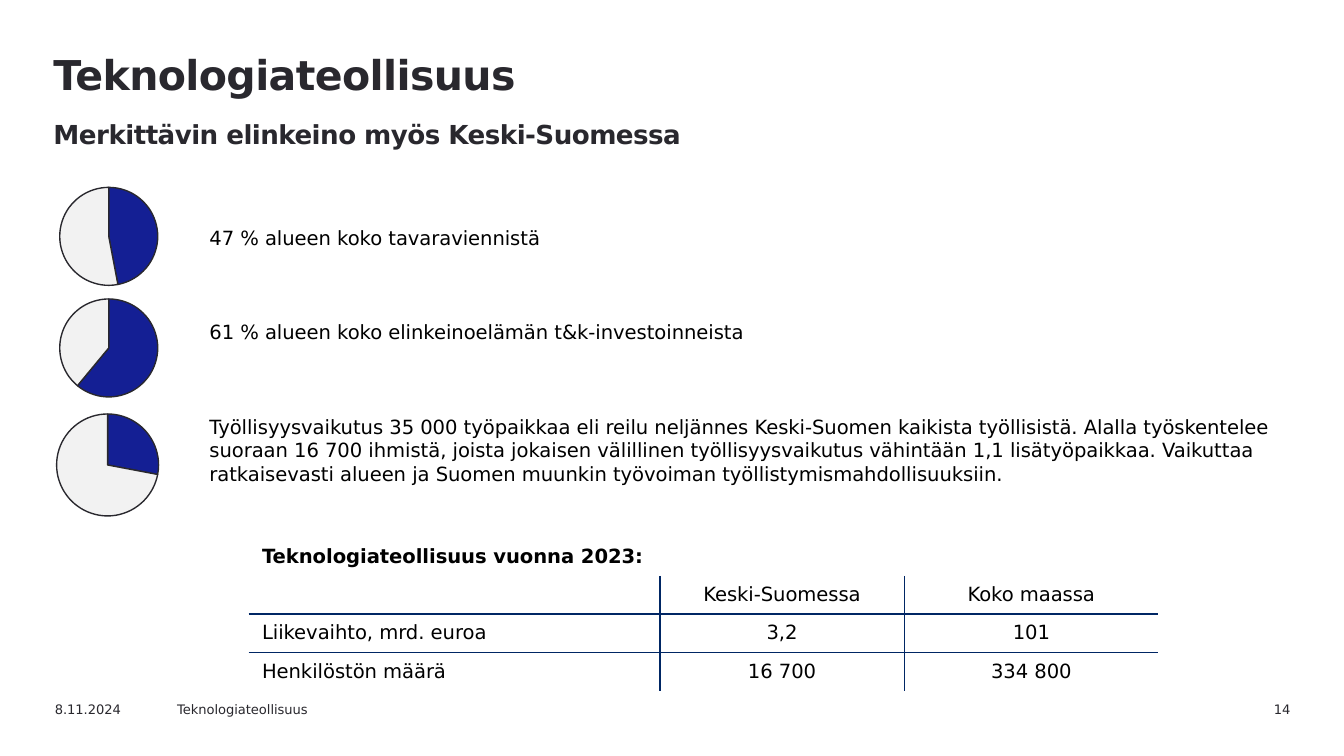
from dataclasses import dataclass

from lxml.etree import SubElement, fromstring
from pptx import Presentation
from pptx.chart.data import CategoryChartData as ChartData
from pptx.dml.color import RGBColor as RGB
from pptx.enum.chart import XL_CHART_TYPE as Kind
from pptx.enum.text import MSO_ANCHOR as Anchor, PP_ALIGN as Align
from pptx.oxml.ns import nsdecls, qn
from pptx.util import Pt


@dataclass(frozen=True)
class Theme:
    font: str = "DejaVu Sans"
    dark: str = "29282E"
    black: str = "000000"
    blue: str = "141F94"
    pale: str = "F2F2F2"
    rule: str = "002664"
    title: float = 22
    sub: float = 14
    body: float = 10.5
    foot: float = 7


THEME = Theme()

POINTS = [
    "47 % alueen koko tavaraviennistä",
    "61 % alueen koko elinkeinoelämän t&k-investoinneista",
    "Työllisyysvaikutus 35 000 työpaikkaa eli reilu neljännes Keski-Suomen "
    "kaikista työllisistä. Alalla työskentelee suoraan 16 700 ihmistä, joista "
    "jokaisen välillinen työllisyysvaikutus vähintään 1,1 lisätyöpaikkaa. "
    "Vaikuttaa ratkaisevasti alueen ja Suomen muunkin työvoiman "
    "työllistymismahdollisuuksiin.",
]
PIES = [(47, 22.3, 90.7, 72), (61, 22.3, 150.5, 72), (28, 20.2, 211.7, 74.9)]
ROWS = [
    ["Teknologiateollisuus vuonna 2023:", "", ""],
    ["", "Keski-Suomessa", "Koko maassa"],
    ["Liikevaihto, mrd. euroa", "3,2", "101"],
    ["Henkilöstön määrä", "16 700", "334 800"],
]
COLS = [220.3, 131, 136.1]


def write(par, text, size=THEME.body, color=THEME.black, bold=False,
          align=Align.LEFT, track=0):
    """Add a run to a paragraph; track is letter spacing in points."""
    par.alignment = align
    run = par.add_run()
    run.text = text
    font = run.font
    font.name, font.size, font.bold = THEME.font, Pt(size), bold
    font.color.rgb = RGB.from_string(color)
    if track:
        run._r.get_or_add_rPr().set("spc", str(round(track * 100)))


def add_box(slide, x, y, w, h):
    box = slide.shapes.add_textbox(Pt(x), Pt(y), Pt(w), Pt(h))
    box.text_frame.word_wrap = True
    return box.text_frame


def add_head(slide):
    par = add_box(slide, 20.2, 22.5, 629.3, 51).paragraphs[0]
    par.line_spacing = Pt(27)
    par._p.get_or_add_pPr().set("marL", str(Pt(1.4)))
    look = dict(color=THEME.dark, bold=True, track=-0.3)
    write(par, "Teknologiateollisuus", size=THEME.title, **look)
    par.add_line_break()
    write(par, "Merkittävin elinkeino myös Keski-Suomessa",
          size=THEME.sub, **look)


def add_points(slide):
    frame = add_box(slide, 105.1, 117.4, 589.7, 174.2)
    for i, text in enumerate(POINTS):
        par = frame.add_paragraph() if i else frame.paragraphs[0]
        if i:
            par.space_before = Pt(38)
        write(par, text)


def add_foot(slide, text, x, w, align=Align.LEFT):
    par = add_box(slide, x, 372.2, w, 13).paragraphs[0]
    write(par, text, size=THEME.foot, color=THEME.dark, align=align)


def add_pie(slide, share, x, y, side):
    data = ChartData()
    data.categories = ["1", "2"]
    data.add_series("Series 1", (share, 100 - share))
    chart = slide.shapes.add_chart(
        Kind.PIE, Pt(x), Pt(y), Pt(side), Pt(side), data).chart
    chart.has_legend = chart.has_title = False
    chart.font.name, chart.font.size = THEME.font, Pt(18)
    chart.font.color.rgb = RGB.from_string(THEME.dark)
    plot = chart.plots[0]
    plot.vary_by_categories = True
    for i, color in enumerate((THEME.blue, THEME.pale)):
        look = plot.series[0].points[i].format
        look.fill.solid()
        look.fill.fore_color.rgb = RGB.from_string(color)
        look.line.color.rgb = RGB.from_string(THEME.dark)
        look.line.width = Pt(0.75)
    set_plot(chart, 0.135, 0.73)


def set_plot(chart, start, size):
    """Fix the plot area as fractions of the chart's side."""
    area = chart._chartSpace.chart.plotArea
    for old in area.findall(qn("c:layout")):
        area.remove(old)
    layout = fromstring(f"<c:layout {nsdecls('c')}/>")
    area.insert(0, layout)
    manual = SubElement(layout, qn("c:manualLayout"))
    for tag, val in (("layoutTarget", "inner"), ("xMode", "edge"),
                     ("yMode", "edge"), ("x", start), ("y", start),
                     ("w", size), ("h", size)):
        SubElement(manual, qn("c:" + tag)).set("val", str(val))


def set_edges(cell, edges):
    """Draw the edges that are true, in the order left, right, top, bottom."""
    props = cell._tc.get_or_add_tcPr()
    for i, (side, on) in enumerate(zip("LRTB", edges)):
        paint = (f'<a:solidFill><a:srgbClr val="{THEME.rule}"/></a:solidFill>'
                 if on else "<a:noFill/>")
        props.insert(i, fromstring(
            f'<a:ln{side} {nsdecls("a")} w="{Pt(1)}">{paint}</a:ln{side}>'))


def add_grid(slide):
    table = slide.shapes.add_table(
        len(ROWS), len(COLS), Pt(133.2), Pt(288), Pt(sum(COLS)), Pt(82)).table
    table.first_row = table.horz_banding = False
    for col, width in zip(table.columns, COLS):
        col.width = Pt(width)
    for r, row in enumerate(ROWS):
        table.rows[r].height = Pt(20.5)
        for c, text in enumerate(row):
            cell = table.cell(r, c)
            cell.fill.background()
            cell.vertical_anchor = Anchor.MIDDLE
            set_edges(cell, (r > 0 and c > 0, r > 0 and c < 2,
                             r > 1, 0 < r < 3))
            par = cell.text_frame.paragraphs[0]
            par.font.size = Pt(THEME.body)
            if text:
                write(par, text, bold=r == 0,
                      align=Align.CENTER if c else Align.LEFT)
    table.cell(0, 0).merge(table.cell(0, 2))


def main():
    deck = Presentation()
    deck.slide_width, deck.slide_height = Pt(720), Pt(405)
    slide = deck.slides.add_slide(deck.slide_layouts[6])
    add_head(slide)
    add_foot(slide, "14", 630.7, 67.7, align=Align.RIGHT)
    add_foot(slide, "8.11.2024", 22.3, 72)
    add_foot(slide, "Teknologiateollisuus", 87.8, 102.2)
    add_points(slide)
    for pie in PIES:
        add_pie(slide, *pie)
    add_grid(slide)
    deck.save("out.pptx")


if __name__ == "__main__":
    main()
